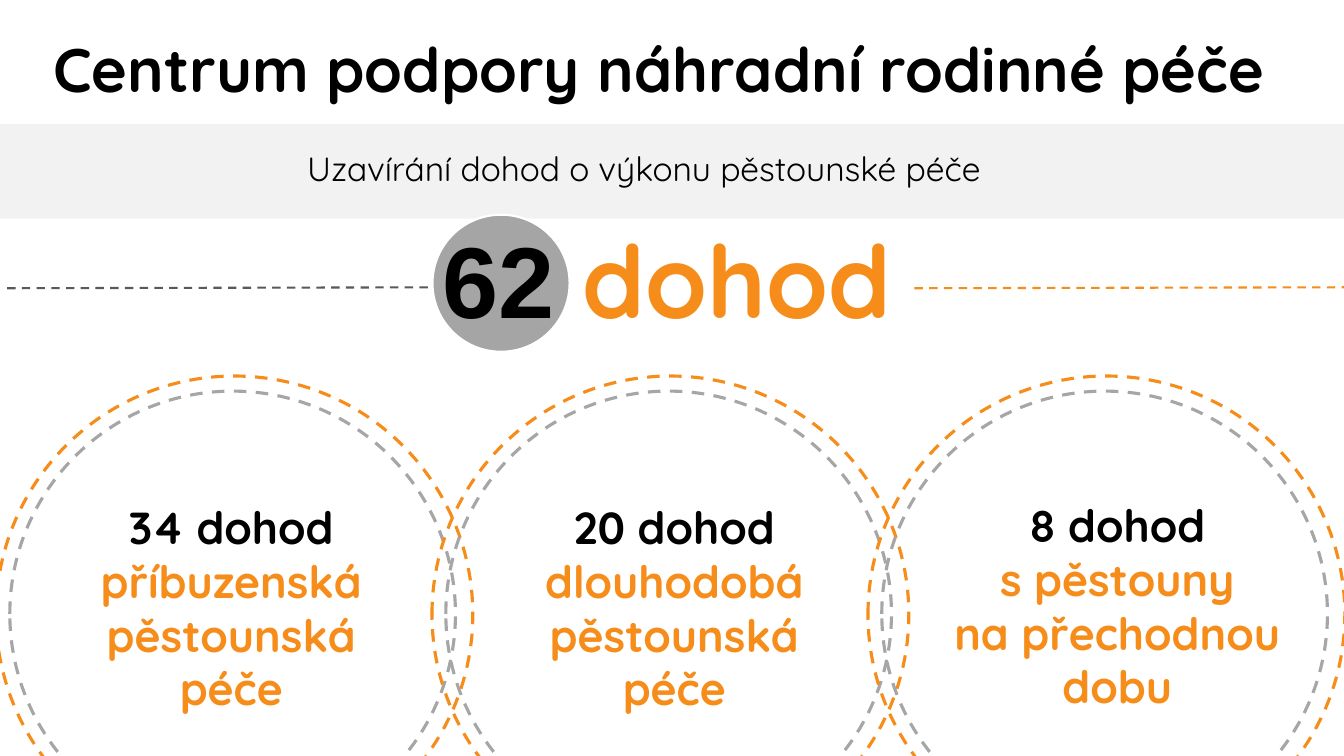
import pptx
import pptx.util
import pptx.dml.color
import pptx.enum.dml
import pptx.enum.shapes
import pptx.enum.text
import pptx.oxml

RGBColor = pptx.dml.color.RGBColor
BLACK = RGBColor(0x00, 0x00, 0x00)
WHITE = RGBColor(0xFF, 0xFF, 0xFF)
ORANGE = RGBColor(0xF6, 0x8D, 0x1A)
PALE = RGBColor(0xF2, 0xF2, 0xF2)
GREY = RGBColor(0xA5, 0xA5, 0xA5)
SILVER = RGBColor(0xA6, 0xA6, 0xA6)
DARK = RGBColor(0x59, 0x59, 0x59)
SHAPE = pptx.enum.shapes.MSO_SHAPE
ALIGN = pptx.enum.text.PP_ALIGN
DASH = pptx.enum.dml.MSO_LINE.DASH
FONT = "Quicksand"


class Board:
    """Draws on one slide, with lengths in percent of its width and height."""

    def __init__(self, deck):
        self.wide, self.high = deck.slide_width, deck.slide_height
        self.slide = deck.slides.add_slide(deck.slide_layouts[5])
        self.shapes = self.slide.shapes

    def x(self, share):
        return round(self.wide * share / 100)

    def y(self, share):
        return round(self.high * share / 100)

    def box(self, left, top, width, height):
        return self.x(left), self.y(top), self.x(width), self.y(height)

    def style(self, font, size, color=None, bold=False, name=FONT):
        font.size, font.bold, font.name = pptx.util.Pt(size), bold, name
        if color is not None:
            font.color.rgb = color

    def title(self, text, *area):
        item = self.shapes.title
        item.left, item.top, item.width, item.height = self.box(*area)
        frame = item.text_frame
        frame.text = text
        frame.vertical_anchor = pptx.enum.text.MSO_ANCHOR.MIDDLE
        para = frame.paragraphs[0]
        para.alignment, para.line_spacing = ALIGN.CENTER, 0.9
        self.style(para.font, 44, BLACK, True)

    def paint(self, item, fill=None, line=None, weight=1.5, dash=None):
        item.shadow.inherit = False
        if fill is None:
            item.fill.background()
        else:
            item.fill.solid()
            item.fill.fore_color.rgb = fill
        if line is None:
            item.line.fill.background()
        else:
            item.line.color.rgb = line
            item.line.width = pptx.util.Pt(weight)
            item.line.dash_style = dash

    def band(self, fill, *area):
        self.paint(self.shapes.add_shape(SHAPE.RECTANGLE, *self.box(*area)), fill)

    def disc(self, mid, level, width, **look):
        size = self.x(width)
        left, top = self.x(mid) - size // 2, self.y(level) - size // 2
        self.paint(self.shapes.add_shape(SHAPE.OVAL, left, top, size, size), **look)

    def rule(self, start, end, color):
        item = self.shapes.add_connector(
            pptx.enum.shapes.MSO_CONNECTOR.STRAIGHT,
            self.x(start), self.y(38.13), self.x(end), self.y(38))
        item.line.color.rgb = color
        item.line.width = pptx.util.Pt(1.5)
        item.line.dash_style = DASH
        props = item.element.spPr
        props.append(pptx.oxml.parse_xml(
            '<a:effectLst xmlns:a="http://schemas.openxmlformats.org/drawingml/2006/main"/>'))

    def text(self, area, size, align=ALIGN.CENTER, wrap=True, bold=True):
        frame = self.shapes.add_textbox(*self.box(*area)).text_frame
        frame.word_wrap = wrap
        frame.auto_size = pptx.enum.text.MSO_AUTO_SIZE.SHAPE_TO_FIT_TEXT
        para = frame.paragraphs[0]
        para.alignment = align
        self.style(para.font, size, bold=bold)
        return para

    def run(self, para, text, color, name=None):
        item = para.add_run()
        item.text = text
        item.font.color.rgb = color
        if name:
            item.font.name = name


def main():
    deck = pptx.Presentation()
    deck.slide_width = pptx.util.Inches(13.33)
    deck.slide_height = pptx.util.Inches(7.5)
    board = Board(deck)

    board.band(PALE, 0, 16.4, 100, 12.53)
    board.title("Centrum podpory náhradní rodinné péče", -1.95, -0.13, 102, 19.33)
    para = board.text((2.33, 18.93, 91.15, 6.67), 24, bold=False)
    board.run(para, "Uzavírání dohod o výkonu pěstounské péče", BLACK)

    board.rule(0.53, 33.23, DARK)
    board.rule(68.04, 100, ORANGE)
    board.disc(37.28, 37.47, 10.2, fill=GREY, line=WHITE)
    para = board.text((32.18, 28.13, 36.38, 17.47), 72, ALIGN.LEFT, False)
    board.run(para, "62", BLACK, "Arial")
    board.run(para, " dohod", ORANGE)

    groups = [
        ("34 dohod", ["příbuzenská pěstounská péče"], 65.47),
        ("20 dohod", ["dlouhodobá pěstounská péče"], 65.47),
        ("8 dohod", ["s pěstouny", "na přechodnou dobu"], 65.2),
    ]
    for spot, (count, kinds, top) in enumerate(groups):
        mid = 17.44 + 32.44 * spot
        board.disc(mid, 81.27, 35.48, line=ORANGE, weight=2.25, dash=DASH)
        board.disc(mid - 0.13, 81.2, 33.16, line=SILVER, weight=2.25, dash=DASH)
        para = board.text((3.3 + 32.96 * spot, top, 27.83, 30.13), 32)
        board.run(para, count, BLACK)
        for kind in kinds:
            para.add_line_break()
            board.run(para, kind, ORANGE)

    deck.save("out.pptx")


if __name__ == "__main__":
    main()
